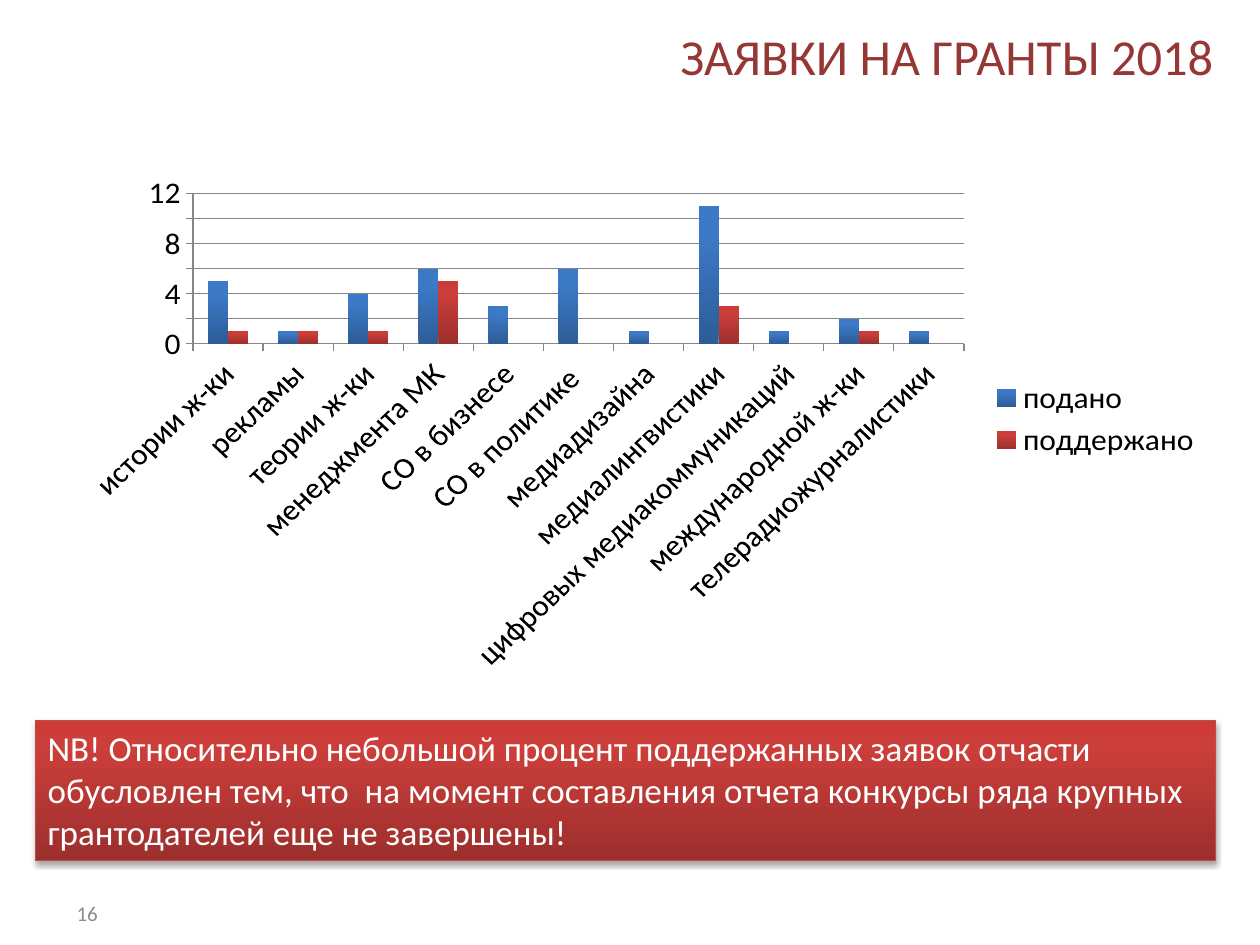
from copy import deepcopy
from dataclasses import dataclass

from lxml.etree import SubElement
from pptx import Presentation
from pptx.chart.data import CategoryChartData
from pptx.dml.color import RGBColor as RGB
from pptx.enum.chart import XL_CHART_TYPE as ChartType, XL_LEGEND_POSITION as LegendPos
from pptx.enum.chart import XL_TICK_MARK as Tick
from pptx.enum.shapes import MSO_SHAPE as Shape
from pptx.enum.text import MSO_ANCHOR as Anchor, PP_ALIGN as Align
from pptx.oxml.ns import qn
from pptx.util import Inches, Pt


@dataclass(frozen=True)
class Theme:
    font: str = "Calibri"
    title: str = "953735"
    ink: str = "000000"
    muted: str = "8C8C8C"
    light: str = "FFFFFF"
    axis: str = "868686"
    edge: str = "BF4C48"
    blue: tuple = ("2D5C97", "3C7AC7", "397BC9")
    red: tuple = ("9C2F2D", "CB3E3A", "CE3B37")
    stops: tuple = (0, 0.8, 1)
    title_size: float = 28.8
    note_size: float = 20
    chart_size: float = 18
    number_size: float = 12


class SlideBuilder:
    def __init__(self, slide, theme):
        self.slide = slide
        self.theme = theme

    def style(self, font, size, color):
        font.name = self.theme.font
        font.size = Pt(size)
        font.color.rgb = RGB.from_string(color)

    def fill_text(self, frame, words, size, color, align=Align.LEFT, anchor=Anchor.MIDDLE):
        frame.word_wrap = True
        frame.vertical_anchor = anchor
        paragraph = frame.paragraphs[0]
        paragraph.alignment = align
        run = paragraph.add_run()
        run.text = words
        self.style(run.font, size, color)

    def text(self, box, words, size, color, align=Align.LEFT):
        label = self.slide.shapes.add_textbox(*map(Inches, box))
        self.fill_text(label.text_frame, words, size, color, align)

    def gradient(self, fill, element, colors):
        fill.gradient()
        fill.gradient_angle = 90
        stop_list = element.find(".//" + qn("a:gsLst"))
        stop_list.append(deepcopy(stop_list[-1]))
        for stop, position, color in zip(fill.gradient_stops, self.theme.stops, colors):
            stop.position = position
            stop.color.rgb = RGB.from_string(color)

    def shadow(self, shape):
        shape.shadow.inherit = False
        effects = shape._element.spPr.find(qn("a:effectLst"))
        outer = SubElement(effects, qn("a:outerShdw"), blurRad=str(Pt(3.1)),
                           dist=str(Pt(1.8)), dir="5400000", rotWithShape="0")
        color = SubElement(outer, qn("a:srgbClr"), val=self.theme.ink)
        SubElement(color, qn("a:alpha"), val="35000")

    def note(self, box, words):
        banner = self.slide.shapes.add_shape(Shape.RECTANGLE, *map(Inches, box))
        self.gradient(banner.fill, banner._element, self.theme.red)
        banner.line.color.rgb = RGB.from_string(self.theme.edge)
        banner.line.width = Pt(0.75)
        self.shadow(banner)
        self.fill_text(banner.text_frame, words, self.theme.note_size, self.theme.light,
                       anchor=Anchor.TOP)

    def axis_line(self, line):
        line.color.rgb = RGB.from_string(self.theme.axis)
        line.width = Pt(0.75)

    def column_chart(self, box, categories, series):
        data = CategoryChartData(number_format="General")
        data.categories = categories
        for name, values, _ in series:
            data.add_series(name, values)
        chart = self.slide.shapes.add_chart(
            ChartType.COLUMN_CLUSTERED, *map(Inches, box), data).chart
        self.style(chart.font, self.theme.chart_size, self.theme.ink)
        chart.has_title = False
        chart.has_legend = True
        chart.legend.position = LegendPos.RIGHT
        chart.legend.include_in_layout = False

        for axis in (chart.category_axis, chart.value_axis):
            axis.major_tick_mark = Tick.OUTSIDE
            axis.minor_tick_mark = Tick.NONE
            self.axis_line(axis.format.line)
        scale = chart.value_axis
        scale.minimum_scale, scale.maximum_scale, scale.major_unit = 0, 12, 2
        scale.has_major_gridlines = True
        self.axis_line(scale.major_gridlines.format.line)

        plot = chart.plots[0]
        plot.gap_width = 150
        plot.overlap = 0
        plot.vary_by_categories = False
        for columns, (_, _, colors) in zip(plot.series, series):
            self.gradient(columns.format.fill, columns._element, colors)


def main():
    deck = Presentation()
    deck.slide_width, deck.slide_height = Inches(10), Inches(7.5)
    theme = Theme()
    builder = SlideBuilder(deck.slides.add_slide(deck.slide_layouts[6]), theme)

    builder.text((2.64, 0.21, 7.09, 0.46), "ЗАЯВКИ НА ГРАНТЫ 2018",
                 theme.title_size, theme.title, Align.RIGHT)
    builder.text((0.51, 7.05, 2.33, 0.4), "16", theme.number_size, theme.muted)

    departments = [
        "истории ж-ки", "рекламы", "теории ж-ки", "менеджмента МК",
        "СО в бизнесе", "СО в политике ", "медиадизайна", "медиалингвистики",
        "цифровых медиакоммуникаций", "международной ж-ки", "телерадиожурналистики",
    ]
    applications = [
        ("подано", (5, 1, 4, 6, 3, 6, 1, 11, 1, 2, 1), theme.blue),
        ("поддержано", (1, 1, 1, 5, 0, 0, 0, 3, 0, 1, 0), theme.red),
    ]
    builder.column_chart((0.51, 1.39, 9.13, 3.94), departments, applications)

    builder.note(
        (0.28, 5.72, 9.37, 1.11),
        "NB! Относительно небольшой процент поддержанных заявок отчасти "
        "обусловлен тем, что  на момент составления отчета конкурсы ряда крупных "
        "грантодателей еще не завершены!")
    deck.save("out.pptx")


if __name__ == "__main__":
    main()
